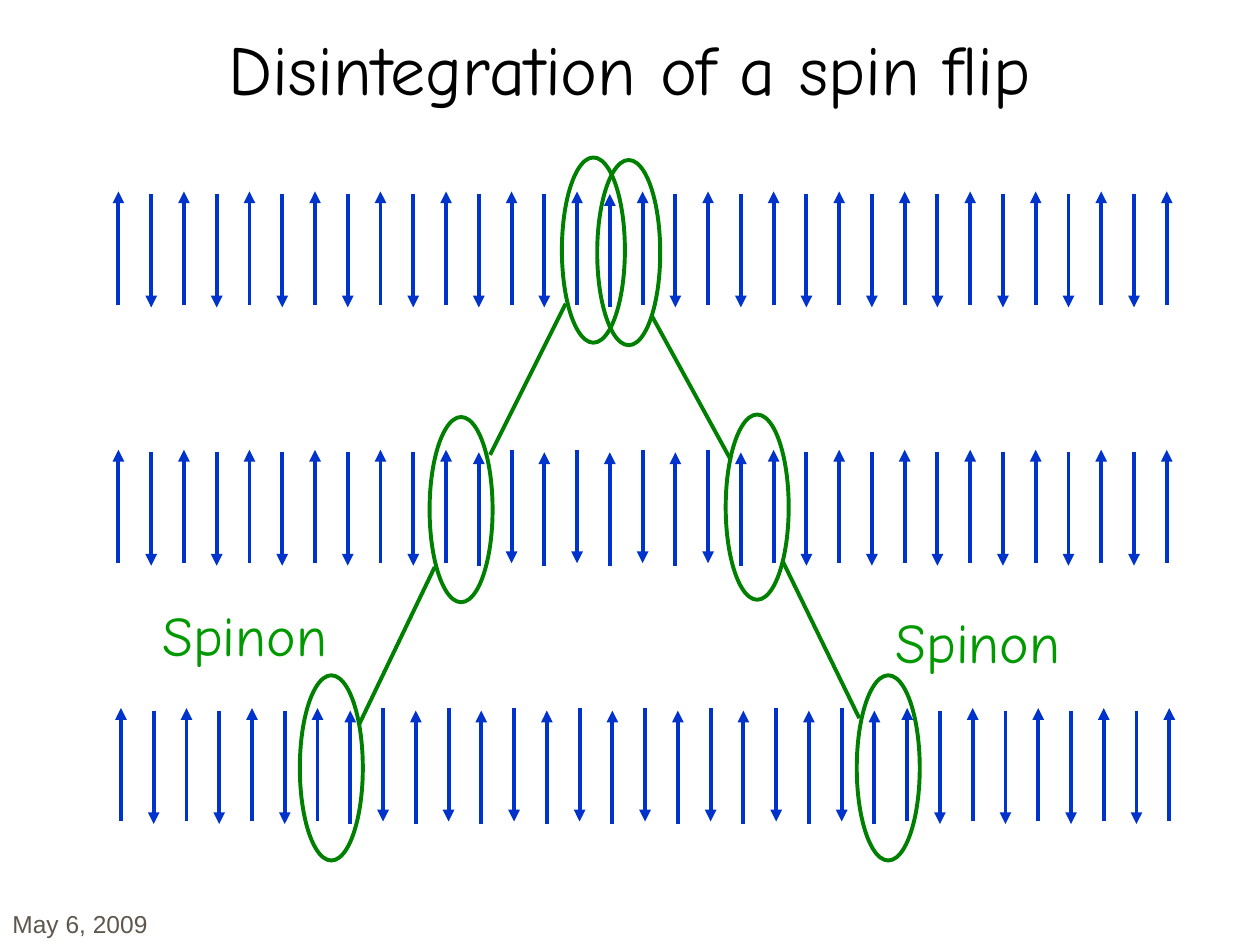
from dataclasses import dataclass

from pptx import Presentation
from pptx.dml.color import RGBColor
from pptx.enum.shapes import MSO_CONNECTOR as Conn, MSO_SHAPE as Shape
from pptx.enum.text import MSO_ANCHOR as Anchor, PP_ALIGN as Align
from pptx.oxml.ns import qn
from pptx.slide import Slide
from pptx.util import Inches, Pt
from lxml.etree import SubElement

COLORS = {
    "title": "000000",
    "spin": "0033CC",
    "spinon": "008000",
    "label": "009900",
    "date": "5E574E",
}
SPIN_COUNT = 33
SPIN_STEP = 0.26
SPIN_LENGTH = 0.9
LINE_WIDTH = 2.25


@dataclass
class Chain:
    left: float
    top: float
    first_flipped: int
    last_flipped: int


@dataclass
class Oval:
    left: float
    top: float
    width: float = 0.5
    height: float = 1.47


@dataclass
class Path:
    x1: float
    y1: float
    x2: float
    y2: float


@dataclass
class Label:
    text: str
    left: float
    top: float
    width: float
    height: float
    size: int
    color: str
    font: str = "Comic Neue"
    align: Align = Align.LEFT
    anchor: Anchor = Anchor.TOP
    wrap: bool = True


CHAINS = [
    Chain(0.94, 1.52, 15, 15),
    Chain(0.94, 3.57, 11, 19),
    Chain(0.96, 5.62, 7, 23),
]
OVALS = [
    Oval(4.46, 1.25),
    Oval(4.74, 1.27),
    Oval(3.41, 3.31),
    Oval(5.76, 3.29),
    Oval(2.38, 5.36),
    Oval(6.8, 5.36),
]
PATHS = [
    Path(4.49, 2.41, 3.89, 3.61),
    Path(3.45, 4.5, 2.85, 5.75),
    Path(5.17, 2.5, 5.8, 3.65),
    Path(6.21, 4.45, 6.82, 5.7),
]
LABELS = [
    Label("Disintegration of a spin flip", 0, 0, 10, 0.92, 40, "title",
          align=Align.CENTER, anchor=Anchor.BOTTOM),
    Label("Spinon", 7.01, 4.77, 1.57, 0.63, 32, "label", wrap=False),
    Label("Spinon", 1.19, 4.72, 1.57, 0.63, 32, "label", wrap=False),
    Label("May 6, 2009", 0, 7, 2.08, 0.5, 14, "date", font="Arial",
          anchor=Anchor.BOTTOM),
]


def rgb(name: str) -> RGBColor:
    return RGBColor.from_string(COLORS[name])


def draw_line(s: Slide, path: Path, color: str, arrow: bool = False) -> None:
    ends = (Inches(v) for v in (path.x1, path.y1, path.x2, path.y2))
    c = s.shapes.add_connector(Conn.STRAIGHT, *ends)
    c.line.color.rgb = rgb(color)
    c.line.width = Pt(LINE_WIDTH)
    if arrow:
        SubElement(c.line._get_or_add_ln(), qn("a:tailEnd"), type="triangle")
    SubElement(c._element.spPr, qn("a:effectLst"))


def draw_chain(s: Slide, chain: Chain) -> None:
    for i in range(SPIN_COUNT):
        odd = i % 2 == 1
        flipped = chain.first_flipped <= i <= chain.last_flipped
        x = chain.left + i * SPIN_STEP
        top = chain.top + (0.02 if odd else 0)
        bottom = top + SPIN_LENGTH
        start, end = (bottom, top) if odd == flipped else (top, bottom)
        draw_line(s, Path(x, start, x, end), "spin", arrow=True)


def draw_oval(s: Slide, oval: Oval) -> None:
    box = (Inches(v) for v in (oval.left, oval.top, oval.width, oval.height))
    sp = s.shapes.add_shape(Shape.OVAL, *box)
    sp.shadow.inherit = False
    sp.fill.background()
    sp.line.color.rgb = rgb("spinon")
    sp.line.width = Pt(LINE_WIDTH)


def draw_label(s: Slide, label: Label) -> None:
    box = (Inches(v) for v in (label.left, label.top, label.width, label.height))
    tf = s.shapes.add_textbox(*box).text_frame
    tf.word_wrap = label.wrap
    tf.vertical_anchor = label.anchor
    p = tf.paragraphs[0]
    p.alignment = label.align
    r = p.add_run()
    r.text = label.text
    for name, value in {"name": label.font, "size": Pt(label.size)}.items():
        setattr(r.font, name, value)
    r.font.color.rgb = rgb(label.color)


def main() -> None:
    prs = Presentation()
    prs.slide_width, prs.slide_height = Inches(10), Inches(7.5)
    s = prs.slides.add_slide(prs.slide_layouts[6])
    for chain in CHAINS:
        draw_chain(s, chain)
    for oval in OVALS:
        draw_oval(s, oval)
    for path in PATHS:
        draw_line(s, path, "spinon")
    for label in LABELS:
        draw_label(s, label)
    prs.save("out.pptx")


if __name__ == "__main__":
    main()
